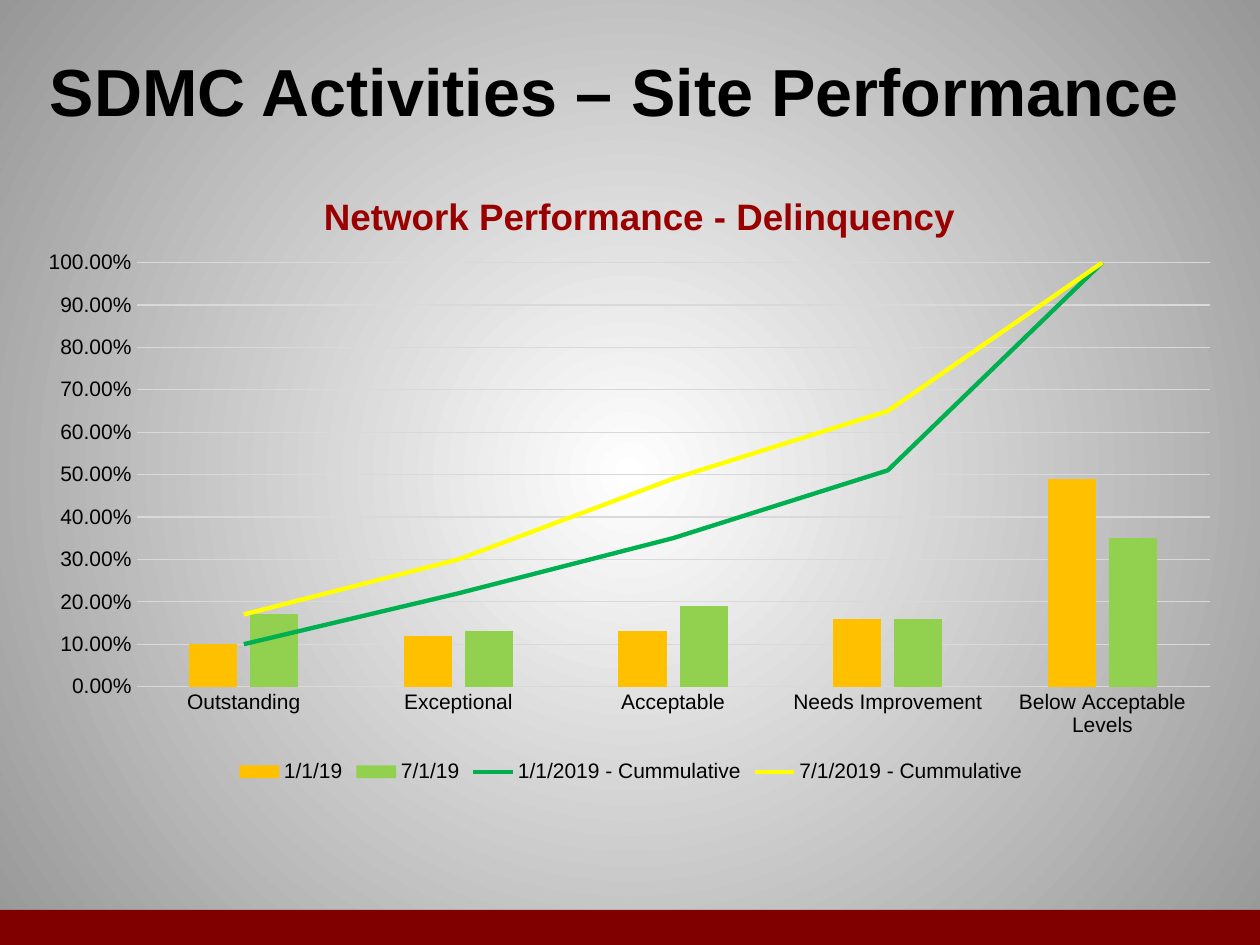
"""Build the site performance slide with a combined column and line chart."""
from dataclasses import dataclass

import lxml.etree
import pptx
import pptx.chart.data
import pptx.dml.color
import pptx.enum.chart
import pptx.enum.shapes
import pptx.enum.text
import pptx.oxml.ns
import pptx.util

EMU = 914400 / 126
qn = pptx.oxml.ns.qn
add = lxml.etree.SubElement


@dataclass(frozen=True)
class Theme:
    font: str = "Arial"
    ink: str = "000000"
    head: str = "990000"
    band: str = "800000"
    grid: str = "D9D9D9"
    glow: str = "FFFFFF"
    edge: str = "979797"
    big: int = 38
    mid: int = 21
    small: int = 12
    thin: float = 0.75
    thick: float = 2.5


@dataclass(frozen=True)
class Box:
    left: int
    top: int
    width: int
    height: int

    def emu(self) -> tuple[int, ...]:
        return tuple(px(n) for n in (self.left, self.top, self.width, self.height))


@dataclass(frozen=True)
class Series:
    name: str
    color: str
    vals: tuple[float, ...]


THEME = Theme()
PAGE = Box(0, 0, 1260, 945)
BAND = Box(0, 910, 1260, 35)
TITLE = Box(28, 38, 1192, 158)
CHART = Box(28, 155, 1206, 633)
PLOT = Box(139, 261, 1070, 422)
LEVELS = ("Outstanding", "Exceptional", "Acceptable", "Needs Improvement",
          "Below Acceptable Levels")
BARS = (
    Series("1/1/19", "FFC000", (0.1, 0.12, 0.13, 0.16, 0.49)),
    Series("7/1/19", "92D050", (0.17, 0.13, 0.19, 0.16, 0.35)),
)
LINES = (
    Series("1/1/2019 - Cummulative", "00B050", (0.1, 0.22, 0.35, 0.51, 1)),
    Series("7/1/2019 - Cummulative", "FFFF00", (0.17, 0.3, 0.49, 0.65, 1)),
)


def px(n: int) -> int:
    return round(n * EMU)


def rgb(code: str) -> pptx.dml.color.RGBColor:
    return pptx.dml.color.RGBColor.from_string(code)


def style(font, size: int, color: str, bold: bool) -> None:
    font.name = THEME.font
    font.size = pptx.util.Pt(size)
    font.bold = bold
    font.color.rgb = rgb(color)


def stroke(line, color: str, width: float) -> None:
    line.color.rgb = rgb(color)
    line.width = pptx.util.Pt(width)


def paint(slide) -> None:
    fill = slide.background.fill
    fill.gradient()
    for stop, color in zip(fill.gradient_stops, (THEME.glow, THEME.edge)):
        stop.color.rgb = rgb(color)
    lin = next(slide.element.iter(qn("a:lin")))
    grad = lin.getparent()
    grad.remove(lin)
    ring = add(grad, qn("a:path"), path="circle")
    add(ring, qn("a:fillToRect"), l="50000", t="50000", r="50000", b="50000")


def band(slide) -> None:
    shape = slide.shapes.add_shape(
        pptx.enum.shapes.MSO_SHAPE.RECTANGLE, *BAND.emu())
    shape.shadow.inherit = False
    shape.fill.solid()
    shape.fill.fore_color.rgb = rgb(THEME.band)
    shape.line.fill.background()


def title(slide) -> None:
    frame = slide.shapes.add_textbox(*TITLE.emu()).text_frame
    frame.word_wrap = True
    frame.margin_top = px(12)
    para = frame.paragraphs[0]
    para.text = "SDMC Activities – Site Performance "
    para.alignment = pptx.enum.text.PP_ALIGN.CENTER
    style(para.font, THEME.big, THEME.ink, True)


def place(part, slot: int, **spots: float | str) -> None:
    layout = part.find(qn("c:layout"))
    if layout is None:
        layout = lxml.etree.Element(qn("c:layout"))
        part.insert(slot, layout)
    manual = add(layout, qn("c:manualLayout"))
    for key, val in spots.items():
        add(manual, qn(f"c:{key}"), val=str(val))


def combine(chart) -> None:
    bar = chart.plots[0]
    bar.gap_width = 219
    bar.overlap = -27
    bar.vary_by_categories = False
    root = next(chart.element.iter(qn("c:barChart")))
    group = lxml.etree.Element(qn("c:lineChart"))
    root.addnext(group)
    add(group, qn("c:grouping"), val="standard")
    add(group, qn("c:varyColors"), val="0")
    for ser in root.findall(qn("c:ser"))[len(BARS):]:
        for flag in ser.findall(qn("c:invertIfNegative")):
            ser.remove(flag)
        group.append(ser)
    add(group, qn("c:marker"), val="1")
    for axis in root.findall(qn("c:axId")):
        add(group, qn("c:axId"), val=axis.get("val"))


def tint(chart) -> None:
    for ser, spec in zip(chart.plots[0].series, BARS):
        ser.format.fill.solid()
        ser.format.fill.fore_color.rgb = rgb(spec.color)
    for ser, spec in zip(chart.plots[1].series, LINES):
        stroke(ser.format.line, spec.color, THEME.thick)
        ser.marker.style = pptx.enum.chart.XL_MARKER_STYLE.NONE
        ser.smooth = False


def axes(chart) -> None:
    cat, val = chart.category_axis, chart.value_axis
    for axis in (cat, val):
        axis.major_tick_mark = pptx.enum.chart.XL_TICK_MARK.NONE
    stroke(cat.format.line, THEME.grid, THEME.thin)
    val.format.line.fill.background()
    val.minimum_scale, val.maximum_scale, val.major_unit = 0, 1, 0.1
    val.tick_labels.number_format = "0.00%"
    val.tick_labels.number_format_is_linked = False
    stroke(val.major_gridlines.format.line, THEME.grid, THEME.thin)


def graph(slide) -> None:
    data = pptx.chart.data.CategoryChartData(number_format="0.00%")
    data.categories = LEVELS
    for spec in BARS + LINES:
        data.add_series(spec.name, spec.vals)
    kind = pptx.enum.chart.XL_CHART_TYPE.COLUMN_CLUSTERED
    chart = slide.shapes.add_chart(kind, *CHART.emu(), data).chart
    style(chart.font, THEME.small, THEME.ink, False)
    clear = lxml.etree.Element(qn("c:spPr"))
    chart.element.find(qn("c:txPr")).addprevious(clear)
    add(clear, qn("a:noFill"))
    add(add(clear, qn("a:ln")), qn("a:noFill"))
    combine(chart)
    tint(chart)
    axes(chart)
    chart.has_legend = True
    chart.legend.position = pptx.enum.chart.XL_LEGEND_POSITION.BOTTOM
    chart.legend.include_in_layout = False
    para = chart.chart_title.text_frame.paragraphs[0]
    para.text = "Network Performance - Delinquency"
    style(para.font, THEME.mid, THEME.head, True)
    head = next(chart.element.iter(qn("c:title")))
    place(head, 1, xMode="edge", yMode="edge", x=0.24, y=0.05)
    area = next(chart.element.iter(qn("c:plotArea")))
    place(area, 0, layoutTarget="inner", xMode="edge", yMode="edge",
          x=round((PLOT.left - CHART.left) / CHART.width, 2),
          y=round((PLOT.top - CHART.top) / CHART.height, 2),
          w=round(PLOT.width / CHART.width, 2),
          h=round(PLOT.height / CHART.height, 2))


def main() -> None:
    deck = pptx.Presentation()
    deck.slide_width, deck.slide_height = px(PAGE.width), px(PAGE.height)
    slide = deck.slides.add_slide(deck.slide_layouts[6])
    for draw in (paint, band, title, graph):
        draw(slide)
    deck.save("out.pptx")


if __name__ == "__main__":
    main()
